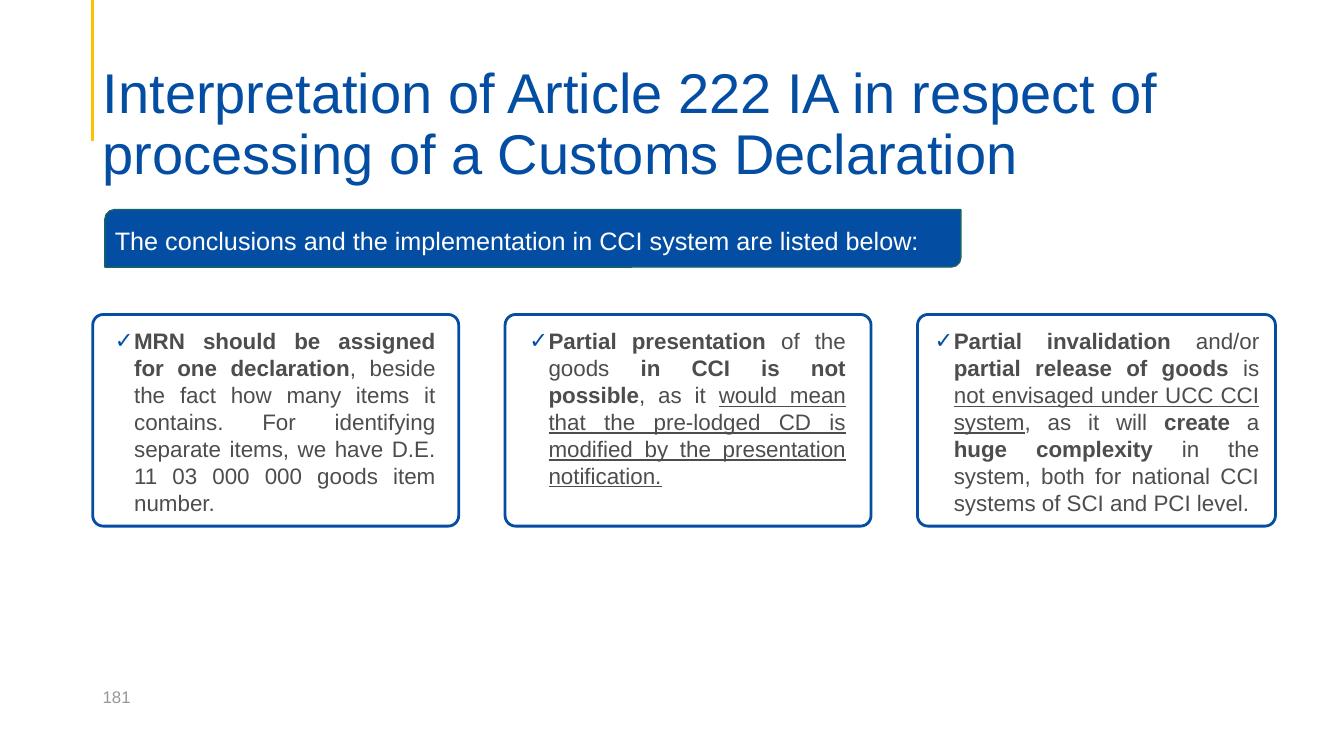
from dataclasses import dataclass

from lxml.etree import SubElement as Sub
from pptx import Presentation
from pptx.dml.color import RGBColor as Rgb
from pptx.enum.shapes import MSO_CONNECTOR as Link, MSO_SHAPE as Kind
from pptx.enum.text import MSO_ANCHOR as Anchor, MSO_AUTO_SIZE as Fit, PP_ALIGN as Align
from pptx.oxml.ns import qn
from pptx.shapes.autoshape import Shape
from pptx.slide import Slide
from pptx.text.text import TextFrame as Frame, _Paragraph as Para
from pptx.util import Emu, Pt

SCALE = 9144
COLORS = {"blue": "034EA2", "edge": "166267", "gold": "FFC000",
          "dark": "4D4D4D", "gray": "979797", "white": "FFFFFF"}
INDENT = 19
Run = tuple[str, str]


@dataclass(frozen=True)
class Box:
    left: int
    top: int
    width: int
    height: int


@dataclass(frozen=True)
class Card:
    slot: int
    frame: Box
    text: Box
    runs: list[Run]


CARDS = [
    Card(2, Box(92, 312, 363, 210), Box(104, 320, 338, 195), [
        ("MRN should be assigned for one declaration", "b"),
        (", beside the fact how many items it contains. For identifying separate "
         "items, we have D.E. 11 03 000 000 goods item number.", "")]),
    Card(3, Box(501, 312, 363, 210), Box(515, 320, 334, 195), [
        ("Partial presentation", "b"), (" of the goods ", ""),
        ("in CCI is not possible", "b"), (", as it ", ""),
        ("would mean that the pre-lodged CD is modified by the presentation "
         "notification.", "u")]),
    Card(4, Box(910, 312, 355, 210), Box(917, 320, 342, 185), [
        ("Partial invalidation", "b"), (" and/or ", ""),
        ("partial release of goods", "b"), (" is ", ""),
        ("not envisaged under UCC CCI system", "u"), (", as it will ", ""),
        ("create", "b"), (" a ", ""), ("huge complexity", "b"),
        (" in the system, both for national CCI systems of SCI and PCI level.", "")]),
]


def px(size: int) -> Emu:
    return Emu(size * SCALE)


def spot(box: Box) -> tuple[Emu, Emu, Emu, Emu]:
    return px(box.left), px(box.top), px(box.width), px(box.height)


def tint(name: str) -> Rgb:
    return Rgb.from_string(COLORS[name])


def place(shape: Shape, box: Box) -> None:
    shape.left, shape.top, shape.width, shape.height = spot(box)


def tick(para: Para) -> None:
    props = para._p.get_or_add_pPr()
    props.set("marL", str(px(INDENT)))
    props.set("indent", str(-px(INDENT)))
    Sub(Sub(props, qn("a:buClr")), qn("a:srgbClr"), val=COLORS["blue"])
    Sub(props, qn("a:buFont"), typeface="Arial")
    Sub(props, qn("a:buChar"), char="✓")


def write(frame: Frame, runs: list[Run], *, size: int, color: str,
          align: Align = Align.LEFT, anchor: Anchor = Anchor.TOP,
          space: float = 1.0, foot: int = 5, bullet: bool = False) -> None:
    frame.word_wrap = True
    frame.auto_size = Fit.NONE
    frame.vertical_anchor = anchor
    frame.margin_left = frame.margin_right = px(10)
    frame.margin_top, frame.margin_bottom = px(5), px(foot)
    para = frame.paragraphs[0]
    if bullet:
        tick(para)
    para.alignment = align
    para.line_spacing = space
    para.space_before = Pt(0)
    for text, style in runs:
        run = para.add_run()
        run.text = text
        font = run.font
        font.name, font.size = "Arial", Pt(size)
        font.color.rgb = tint(color)
        font.bold, font.underline = "b" in style, "u" in style


def panel(slide: Slide, kind: Kind, box: Box, line: str, width: int,
          fill: str | None = None) -> Shape:
    shape = slide.shapes.add_shape(kind, *spot(box))
    shape.shadow.inherit = False
    shape.line.color.rgb, shape.line.width = tint(line), Pt(width)
    if fill:
        shape.fill.solid()
        shape.fill.fore_color.rgb = tint(fill)
    else:
        shape.fill.background()
    return shape


def rule(slide: Slide) -> None:
    line = slide.shapes.add_connector(Link.STRAIGHT, px(92), px(0), px(92), px(140))
    line.line.color.rgb, line.line.width = tint("gold"), Pt(2.25)
    Sub(line._element.spPr, qn("a:effectLst"))


def main() -> None:
    deck = Presentation()
    deck.slide_width, deck.slide_height = px(1333), px(750)
    slide = deck.slides.add_slide(deck.slide_layouts[4])
    shapes = slide.shapes
    slots = {item.placeholder_format.idx: item for item in slide.placeholders}
    spare = slots[1]._element
    spare.getparent().remove(spare)

    rule(slide)
    place(shapes.title, Box(92, 79, 1221, 106))
    write(shapes.title.text_frame,
          [("Interpretation of Article 222 IA in respect of processing of a "
            "Customs Declaration", "")],
          size=40, color="blue", anchor=Anchor.BOTTOM, space=0.9, foot=0)

    panel(slide, Kind.ROUND_2_DIAG_RECTANGLE, Box(104, 208, 849, 57), "edge", 1, "blue")
    lead = shapes.add_textbox(*spot(Box(104, 219, 858, 40)))
    write(lead.text_frame,
          [("The conclusions and the implementation in CCI system are listed below:", "")],
          size=18, color="white")

    for card in CARDS:
        panel(slide, Kind.ROUNDED_RECTANGLE, card.frame, "blue", 2).adjustments[0] = 0.05
        body = slots[card.slot]
        place(body, card.text)
        write(body.text_frame, card.runs, size=16, color="dark",
              align=Align.JUSTIFY, bullet=True)

    page = shapes.add_textbox(*spot(Box(92, 671, 300, 40)))
    write(page.text_frame, [("181", "")], size=12, color="gray", anchor=Anchor.MIDDLE)
    deck.save("out.pptx")


if __name__ == "__main__":
    main()
